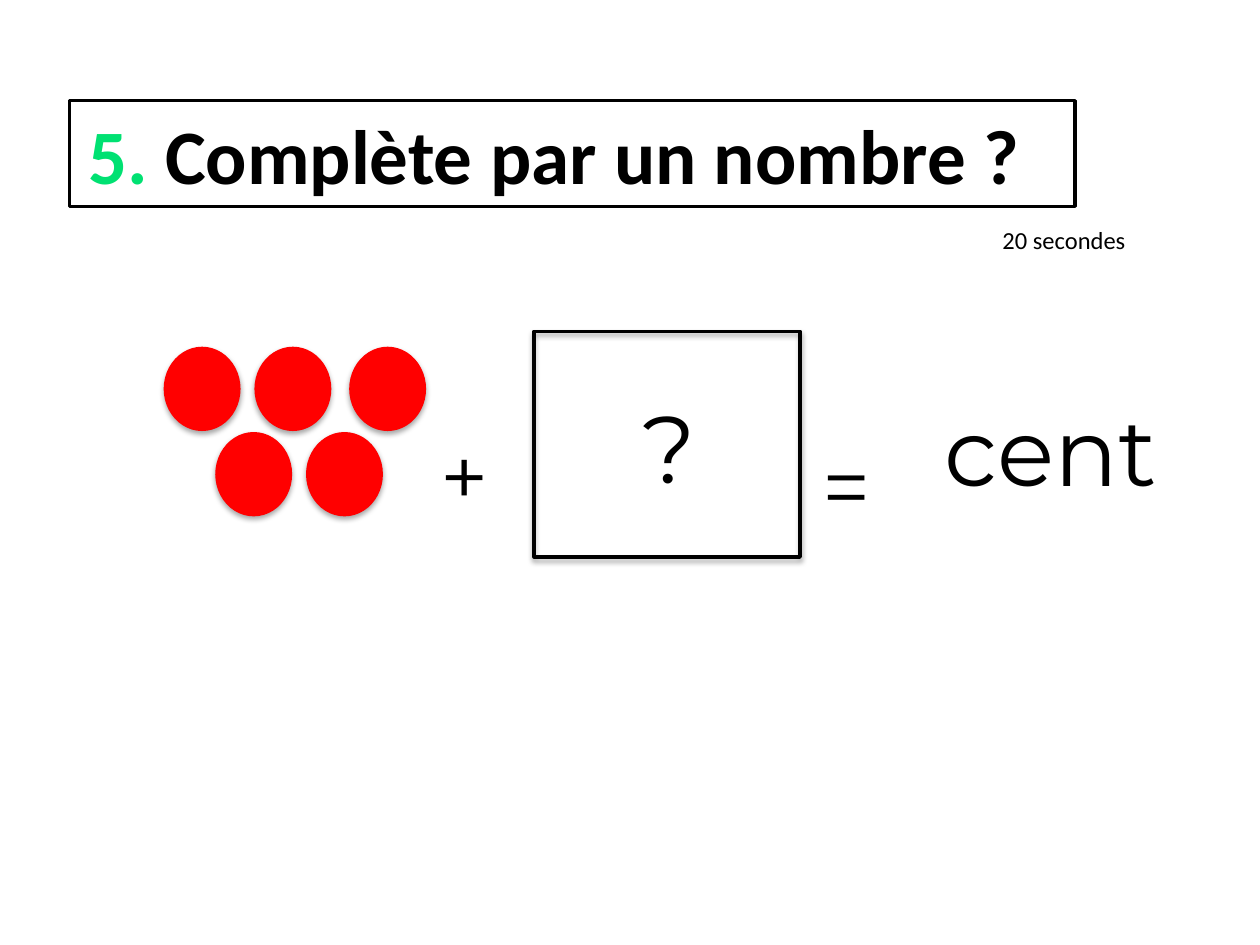
import pptx
import pptx.util
import pptx.dml.color
import pptx.enum.shapes
import pptx.enum.text
import pptx.oxml
import pptx.oxml.ns
from pptx.util import Cm

SHADOW = (
    '<a:outerShdw %s blurRad="40000" dist="23000" dir="5400000" rotWithShape="0">'
    '<a:srgbClr val="000000"><a:alpha val="35000"/></a:srgbClr></a:outerShdw>'
    % pptx.oxml.ns.nsdecls("a")
)


def rgb(value):
    return pptx.dml.color.RGBColor.from_string(value)


class Builder:
    black, white, green, red = "000000", "FFFFFF", "00E172", "FF0000"
    body, display = "Calibri", "Montserrat"
    line_width = 2

    def __init__(self, s):
        self.s = s

    def paint(self, sp, fill=None, line=None):
        if fill:
            sp.fill.solid()
            sp.fill.fore_color.rgb = rgb(fill)
        else:
            sp.fill.background()
        if line:
            sp.line.color.rgb = rgb(line)
            sp.line.width = pptx.util.Pt(self.line_width)
        else:
            sp.line.fill.background()

    def add_run(self, p, text, font, size, color, bold=False):
        r = p.add_run()
        r.text = text
        r.font.name = font
        r.font.size = pptx.util.Pt(size)
        r.font.bold = bold
        r.font.color.rgb = rgb(color)

    def title(self, x, y, w, h, runs):
        sp = self.s.shapes.title
        sp.left, sp.top, sp.width, sp.height = Cm(x), Cm(y), Cm(w), Cm(h)
        self.paint(sp, self.white, self.black)
        tf = sp.text_frame
        tf.auto_size = pptx.enum.text.MSO_AUTO_SIZE.NONE
        tf.margin_right = Cm(0.98)
        p = tf.paragraphs[0]
        p.alignment = pptx.enum.text.PP_ALIGN.CENTER
        for text, color in runs:
            self.add_run(p, text, self.body, 44, color, True)

    def text(self, x, y, w, h, text, size, font=display, fill=None, wrap=True):
        sp = self.s.shapes.add_textbox(Cm(x), Cm(y), Cm(w), Cm(h))
        self.paint(sp, fill)
        tf = sp.text_frame
        tf.word_wrap = wrap
        self.add_run(tf.paragraphs[0], text, font, size, self.black)

    def shape(self, kind, x, y, w, h, fill=None, line=None, parent=None):
        shapes = (parent or self.s).shapes
        sp = shapes.add_shape(kind, Cm(x), Cm(y), Cm(w), Cm(h))
        self.paint(sp, fill, line)
        sp.shadow.inherit = False
        effects = sp.element.spPr.find(pptx.oxml.ns.qn("a:effectLst"))
        effects.append(pptx.oxml.parse_xml(SHADOW))

    def counters(self, rows, w, h):
        group = self.s.shapes.add_group_shape()
        oval = pptx.enum.shapes.MSO_SHAPE.OVAL
        for y, lefts in rows:
            for x in lefts:
                self.shape(oval, x, y, w, h, fill=self.red, parent=group)


def main():
    prs = pptx.Presentation()
    prs.slide_width, prs.slide_height = Cm(25.4), Cm(19.05)
    b = Builder(prs.slides.add_slide(prs.slide_layouts[5]))

    b.title(1.4, 2.03, 20.27, 2.13,
            [("5.", b.green), (" Complète par un nombre ?", b.black)])
    b.text(19.96, 4.42, 3.02, 0.86, "20 secondes", 14, b.body, b.white, wrap=False)

    b.text(12.7, 7.72, 1.75, 2.57, "?", 54)
    b.text(16.33, 8.61, 1.75, 2.31, "=", 48)
    b.text(18.8, 7.77, 6.17, 2.57, "cent", 54)
    b.text(8.64, 8.41, 1.75, 2.31, "+", 48)
    b.shape(pptx.enum.shapes.MSO_SHAPE.RECTANGLE, 10.77, 6.68, 5.36, 4.55, line=b.black)
    b.counters([(6.99, (3.3, 5.13, 7.04)), (8.71, (4.34, 6.17))], 1.55, 1.7)

    prs.save("out.pptx")


if __name__ == "__main__":
    main()
